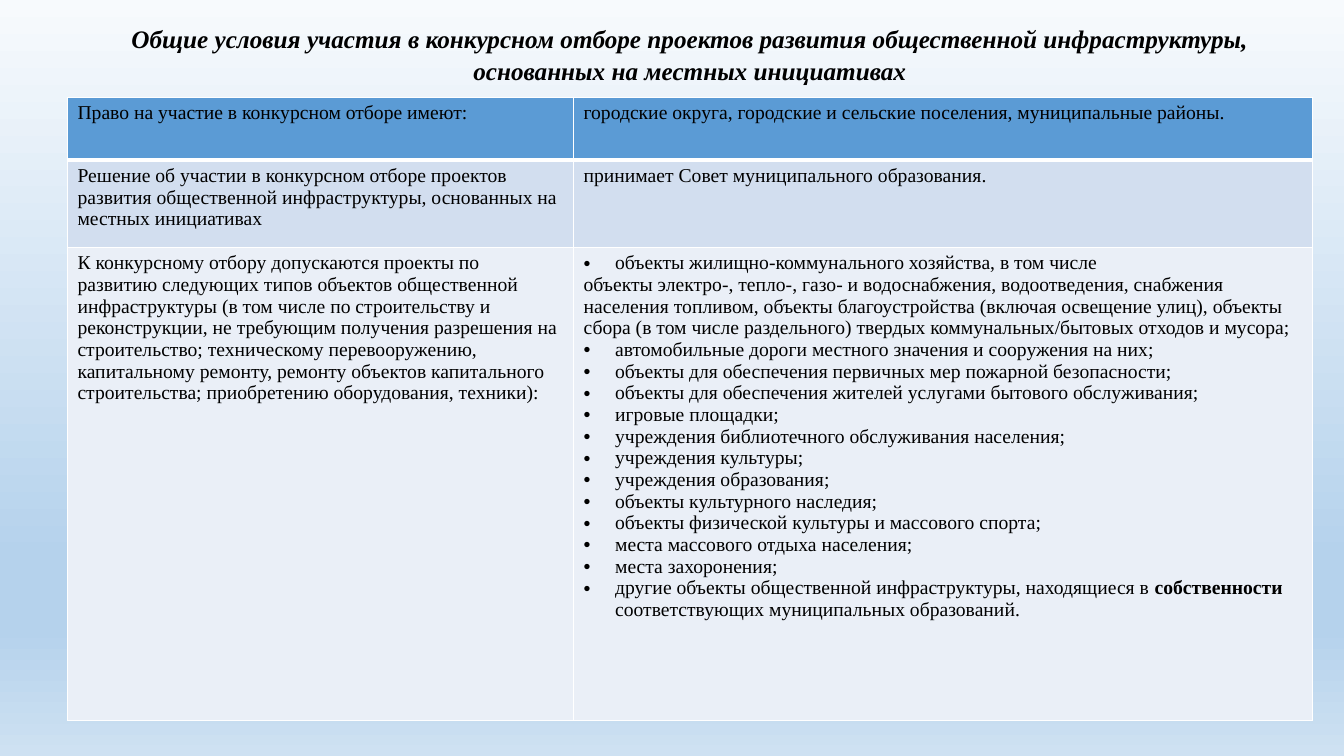
"""Build a slide with the conditions for entering the local initiatives contest."""
from lxml.etree import SubElement
from pptx import Presentation
from pptx.dml.color import RGBColor as RGB
from pptx.enum.text import PP_ALIGN as Align
from pptx.oxml.ns import qn
from pptx.util import Pt

BLACK = RGB(0x00, 0x00, 0x00)
WHITE = RGB(0xFF, 0xFF, 0xFF)
HEADER_BLUE = RGB(0x5B, 0x9B, 0xD5)
BAND_BLUE = RGB(0xD2, 0xDE, 0xEF)
PALE_BLUE = RGB(0xEA, 0xEF, 0xF7)
SKY_TOP = RGB(0xF7, 0xFA, 0xFD)
SKY_MIDDLE = RGB(0xB5, 0xD2, 0xEC)
SKY_BOTTOM = RGB(0xCE, 0xE1, 0xF2)

FONT = "Times New Roman"
BODY_FORMAT = {"name": FONT, "size": Pt(14), "bold": False}
TITLE_FORMAT = {"name": FONT, "size": Pt(18), "bold": True, "italic": True}
LEFT, WIDTH = Pt(48.2), Pt(889.2)
COLUMN_WIDTHS = [361.5, 527.7]
ROW_HEIGHTS = [44.6, 62.6, 337.7]
ROW_FILLS = [HEADER_BLUE, BAND_BLUE, PALE_BLUE]
BULLET_INDENT = Pt(22.5)

TITLE = ("Общие условия участия в конкурсном отборе проектов развития "
         "общественной инфраструктуры, основанных на местных инициативах")
PROJECT_TYPES = [
    "• объекты жилищно-коммунального хозяйства, в том числе",
    "объекты электро-, тепло-, газо- и водоснабжения, водоотведения, снабжения "
    "населения топливом, объекты благоустройства (включая освещение улиц), объекты "
    "сбора (в том числе раздельного) твердых коммунальных/бытовых отходов и мусора;",
    "• автомобильные дороги местного значения и сооружения на них;",
    "• объекты для обеспечения первичных мер пожарной безопасности;",
    "• объекты для обеспечения жителей услугами бытового обслуживания;",
    "• игровые площадки;",
    "• учреждения библиотечного обслуживания населения;",
    "• учреждения культуры;",
    "• учреждения образования;",
    "• объекты культурного наследия;",
    "• объекты физической культуры и массового спорта;",
    "• места массового отдыха населения;",
    "• места захоронения;",
    "• другие объекты общественной инфраструктуры, находящиеся в *собственности* "
    "соответствующих муниципальных образований.",
]
ROWS = [
    (["Право на участие в конкурсном отборе имеют:"],
     ["городские округа, городские и сельские поселения, муниципальные районы."]),
    (["Решение об участии в конкурсном отборе проектов развития общественной "
      "инфраструктуры, основанных на местных инициативах"],
     ["принимает Совет муниципального образования."]),
    (["К конкурсному отбору допускаются проекты по развитию следующих типов объектов "
      "общественной инфраструктуры (в том числе по строительству и реконструкции, не "
      "требующим получения разрешения на строительство; техническому перевооружению, "
      "капитальному ремонту, ремонту объектов капитального строительства; приобретению "
      "оборудования, техники):"],
     PROJECT_TYPES),
]


def add_run(paragraph, text, font_format):
    """Add a black run with the given font format."""
    run = paragraph.add_run()
    run.text = text
    for name, value in font_format.items():
        setattr(run.font, name, value)
    run.font.color.rgb = BLACK


def add_border(cell, side, width):
    """Draw one white border of a cell."""
    line = SubElement(cell._tc.get_or_add_tcPr(), qn(f"a:ln{side}"), w=str(Pt(width)))
    SubElement(SubElement(line, qn("a:solidFill")), qn("a:srgbClr"), val=str(WHITE))


presentation = Presentation()
presentation.slide_width, presentation.slide_height = Pt(960), Pt(540)
slide = presentation.slides.add_slide(presentation.slide_layouts[6])

background = slide.background.fill
background.gradient()
background.gradient_angle = 270
stops = slide.element.find(".//" + qn("a:gsLst"))
stops.clear()
for percent, color in [(0, SKY_TOP), (74, SKY_MIDDLE), (83, SKY_MIDDLE), (100, SKY_BOTTOM)]:
    stop = SubElement(stops, qn("a:gs"), pos=str(percent * 1000))
    SubElement(stop, qn("a:srgbClr"), val=str(color))

table = slide.shapes.add_table(3, 2, LEFT, Pt(69.6), WIDTH, Pt(444.9)).table
table.first_row = table.horz_banding = False
for column, width in zip(table.columns, COLUMN_WIDTHS):
    column.width = Pt(width)
for row, height in zip(table.rows, ROW_HEIGHTS):
    row.height = Pt(height)

for row_index, (cell_texts, fill) in enumerate(zip(ROWS, ROW_FILLS)):
    for column_index, lines in enumerate(cell_texts):
        cell = table.cell(row_index, column_index)
        for side in "LRTB":
            under_header = (row_index, side) in [(0, "B"), (1, "T")]
            add_border(cell, side, 3 if under_header else 1)
        cell.fill.solid()
        cell.fill.fore_color.rgb = fill
        frame = cell.text_frame
        for index, line in enumerate(lines):
            paragraph = frame.add_paragraph() if index else frame.paragraphs[0]
            if line.startswith("• "):
                properties = paragraph._p.get_or_add_pPr()
                properties.set("marL", str(BULLET_INDENT))
                properties.set("indent", str(-BULLET_INDENT))
                SubElement(properties, qn("a:buFont"), typeface="Arial")
                SubElement(properties, qn("a:buChar"), char="•")
            for part, words in enumerate(line.removeprefix("• ").split("*")):
                add_run(paragraph, words, BODY_FORMAT | {"bold": part % 2 == 1})

title = slide.shapes.add_textbox(LEFT, Pt(11.5), WIDTH, Pt(94.3))
title.text_frame.word_wrap = True
heading = title.text_frame.paragraphs[0]
heading.alignment = Align.CENTER
heading.line_spacing = 1.07
add_run(heading, TITLE, TITLE_FORMAT)

presentation.save("out.pptx")
